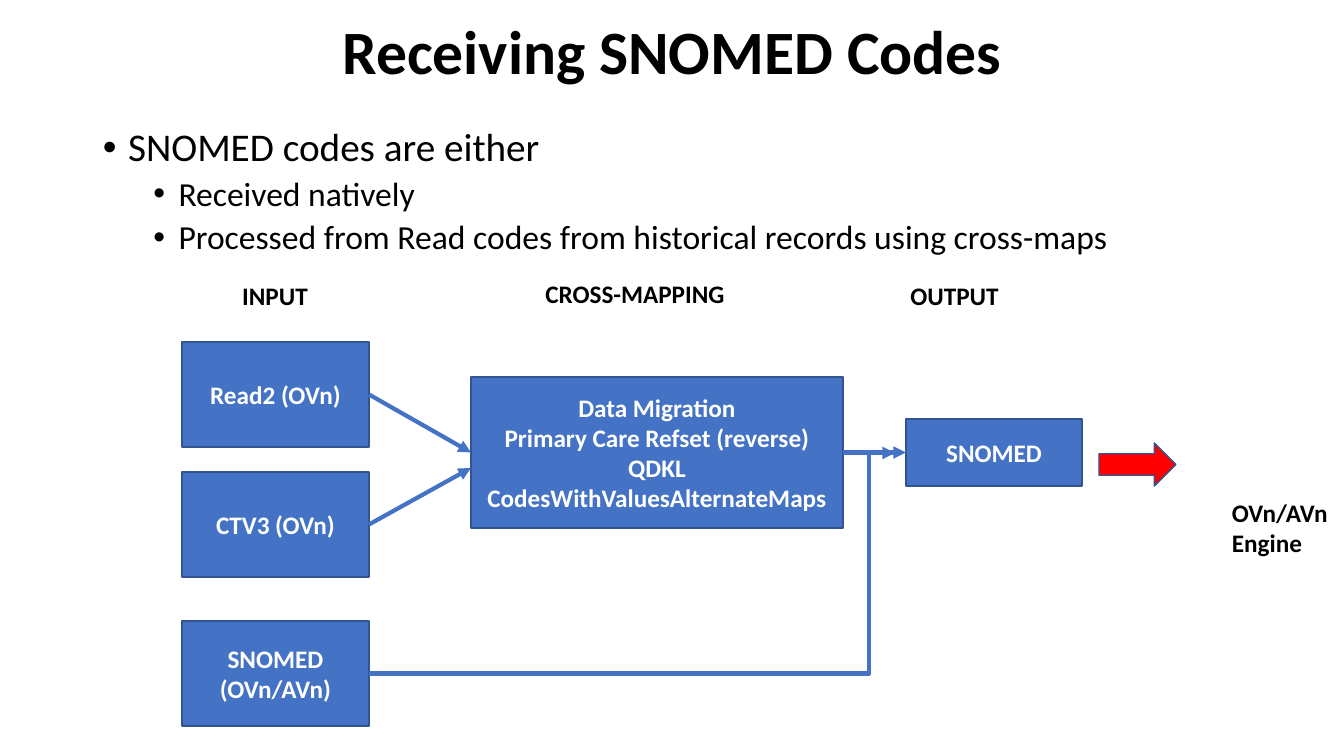
from pptx import Presentation
from pptx import util as u
from pptx.dml.color import RGBColor
from pptx.enum import shapes, text
from pptx.oxml.ns import qn
from lxml import etree

# Content: places are left, top, width, height in px
SIZE = (1344, 756)
TITLE = ("Receiving SNOMED Codes", (93, 9, 1159, 92))
BODY = (93, 123, 1159, 558)
POINTS = [
    ("SNOMED codes are either", 0),
    ("Received natively", 1),
    ("Processed from Read codes from historical records using cross-maps", 1),
]
HEADS = [
    ("INPUT", (182, 275, 186, 41)),
    ("CROSS-MAPPING", (510, 273, 250, 40)),
    ("OUTPUT", (895, 275, 119, 40)),
]
INPUTS = [("Read2 (OVn)", 342), ("CTV3 (OVn)", 472), ("SNOMED (OVn/AVn)", 621)]
IN_LEFT, IN_W, IN_H = 182, 187, 105
MAPS = [
    "Data Migration",
    "Primary Care Refset (reverse)",
    "QDKL",
    "CodesWithValuesAlternateMaps",
]
MAP_AT = (471, 377, 372, 151)
OUTPUT = ("SNOMED", (906, 419, 176, 67))
ENGINE = ("OVn/AVn Engine", (1222, 492, 129, 72))
RED_AT = (1099, 443, 77, 43)
JOIN = (895, 453)
BEND = 95100

BLACK = RGBColor(0, 0, 0)
WHITE = RGBColor(255, 255, 255)
BLUE = RGBColor(0x44, 0x72, 0xC4)
EDGE = RGBColor(0x32, 0x54, 0x91)
RED = RGBColor(255, 0, 0)
LEFT, CENTER = text.PP_ALIGN.LEFT, text.PP_ALIGN.CENTER
TOP, MIDDLE = text.MSO_ANCHOR.TOP, text.MSO_ANCHOR.MIDDLE

deck = Presentation()
px = u.Inches(1) / 100.8


def emu(*vals):
    return [round(v * px) for v in vals]


deck.slide_width, deck.slide_height = emu(*SIZE)
slide = deck.slides.add_slide(deck.slide_layouts[6])
tree = slide.shapes


def write(shape, lines, size=18, color=BLACK, bold=True, align=CENTER,
          anchor=TOP, gap=None):
    frame = shape.text_frame
    frame.word_wrap = True
    frame.vertical_anchor = anchor
    for i, line in enumerate(lines):
        para = frame.paragraphs[0] if i == 0 else frame.add_paragraph()
        para.alignment = align
        if gap:
            para.line_spacing = gap
        run = para.add_run()
        run.text = line
        font = run.font
        font.name, font.size, font.bold = "Calibri", u.Pt(size), bold
        font.color.rgb = color
    return frame.paragraphs


def label(words, at, **form):
    write(tree.add_textbox(*emu(*at)), [words], **form)


def block(lines, at, kind=shapes.MSO_SHAPE.RECTANGLE, fill=BLUE):
    shape = tree.add_shape(kind, *emu(*at))
    shape.shadow.inherit = False
    shape.fill.solid()
    shape.fill.fore_color.rgb = fill
    shape.line.color.rgb = EDGE
    shape.line.width = u.Pt(1)
    if lines:
        write(shape, lines, color=WHITE, anchor=MIDDLE)
    return shape


def arrow(start, end, kind=shapes.MSO_CONNECTOR.STRAIGHT):
    """Run from the right side of start to a box's left side or a point."""
    boxed = not isinstance(end, tuple)
    stop = (end.left, end.top) if boxed else emu(*end)
    link = tree.add_connector(kind, start.left + start.width,
                              start.top + start.height // 2, *stop)
    link.begin_connect(start, 3)
    if boxed:
        link.end_connect(end, 1)
    link.line.color.rgb = BLUE
    link.line.width = u.Pt(3)
    line = link._element.spPr.find(qn("a:ln"))
    etree.SubElement(line, qn("a:tailEnd"), type="triangle")
    etree.SubElement(link._element.spPr, qn("a:effectLst"))
    return link


# Title and bullets
label(*TITLE, size=44, anchor=MIDDLE, gap=0.9)
paras = write(tree.add_textbox(*emu(*BODY)), [p[0] for p in POINTS],
              bold=False, align=LEFT, gap=0.9)
for para, (words, level) in zip(paras, POINTS):
    para.level = level
    para.space_before = u.Pt(5 if level else 10)
    para.runs[0].font.size = u.Pt(24 if level else 28)
    props = para._p.get_or_add_pPr()
    props.set("marL", str(u.Inches(0.25 + 0.5 * level)))
    props.set("indent", str(-u.Inches(0.25)))
    etree.SubElement(props, qn("a:buFont"), typeface="Arial")
    etree.SubElement(props, qn("a:buChar"), char="•")

# Column heads and boxes
for head in HEADS:
    label(*head)
read, ctv, native = [block([name], (IN_LEFT, top, IN_W, IN_H))
                     for name, top in INPUTS]
maps = block(MAPS, MAP_AT)
out = block([OUTPUT[0]], OUTPUT[1])

# Connectors
arrow(read, maps)
arrow(ctv, (MAP_AT[0], 468))
arrow(maps, out)
bent = arrow(native, JOIN, shapes.MSO_CONNECTOR.ELBOW)
geom = bent._element.spPr.find(qn("a:prstGeom"))
guides = geom.find(qn("a:avLst"))
if guides is None:
    guides = etree.SubElement(geom, qn("a:avLst"))
etree.SubElement(guides, qn("a:gd"), name="adj1", fmla=f"val {BEND}")

# Engine
label(*ENGINE, align=LEFT)
block([], RED_AT, shapes.MSO_SHAPE.RIGHT_ARROW, RED)

deck.save("out.pptx")
